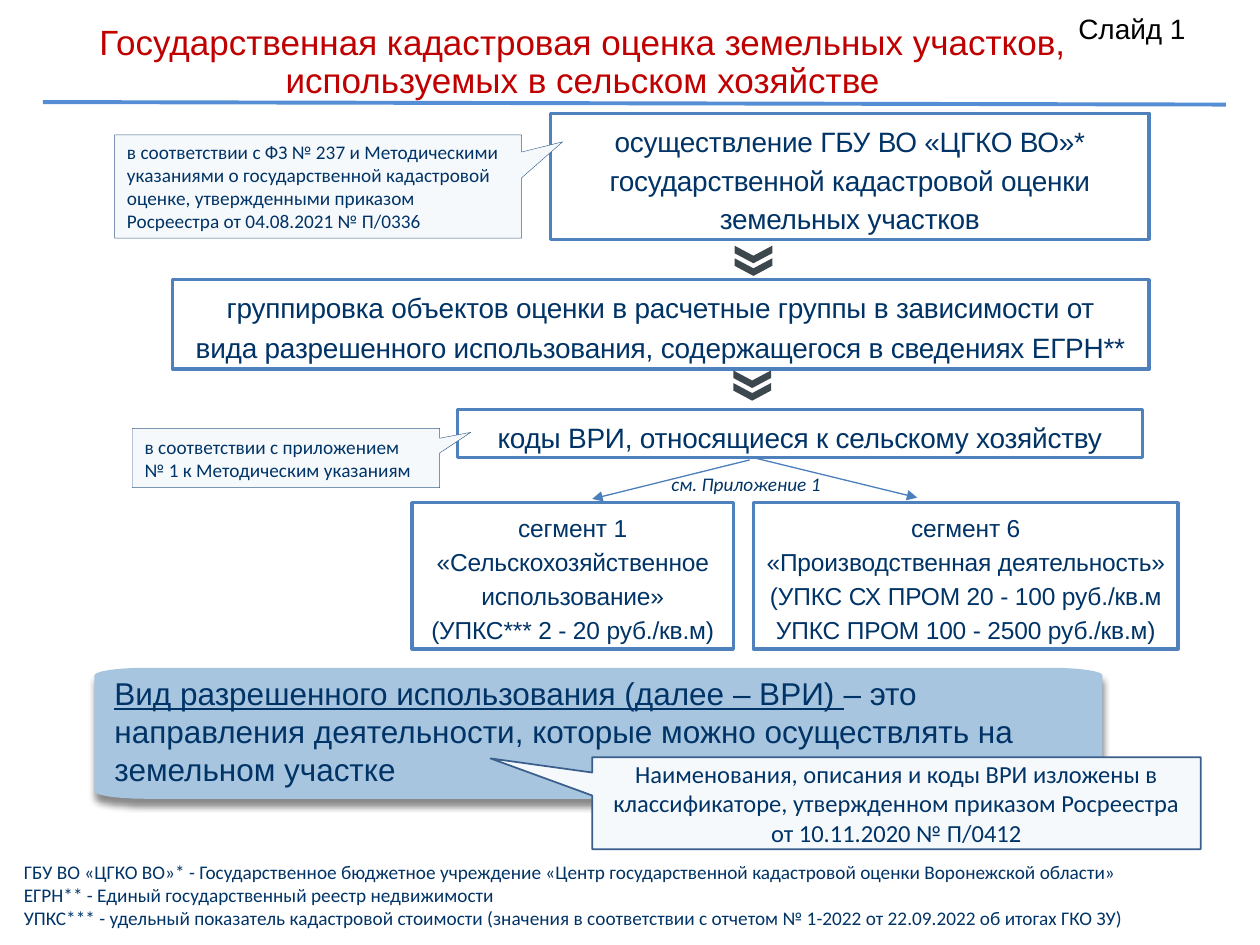
from math import cos, pi, sin

from lxml.etree import SubElement
from pptx import Presentation
from pptx.dml.color import RGBColor
from pptx.enum.shapes import MSO_CONNECTOR as Connector, MSO_SHAPE as Shape
from pptx.enum.text import MSO_ANCHOR as Anchor, MSO_AUTO_SIZE as AutoSize, PP_ALIGN as Align
from pptx.oxml.ns import qn
from pptx.util import Inches, Pt

NAVY = RGBColor(0x00, 0x33, 0x66)
RED = RGBColor(0xC0, 0x00, 0x00)
BLACK = RGBColor(0x00, 0x00, 0x00)
WHITE = RGBColor(0xFF, 0xFF, 0xFF)
RULE_BLUE = RGBColor(0x55, 0x8E, 0xD5)
FRAME_BLUE = RGBColor(0x4F, 0x81, 0xBD)
ARROW_BLUE = RGBColor(0x4B, 0x7E, 0xBC)
PALE = RGBColor(0xF6, 0xF9, 0xFC)
CALLOUT_EDGE = RGBColor(0x3A, 0x5F, 0x8C)
PANEL_BLUE = RGBColor(0xA8, 0xC5, 0xE0)
CHEVRON_GREY = RGBColor(0x3D, 0x48, 0x4E)

STEP_PARAGRAPH = {"alignment": Align.CENTER, "line_spacing": 1.15, "space_before": Pt(0.7)}
SEGMENT_PARAGRAPH = {"alignment": Align.CENTER, "line_spacing": 1.15}
LEFT = {"alignment": Align.LEFT}


def apply(target, formats):
    for name, value in formats.items():
        setattr(target, name, value)


def font_of(name, size, **extra):
    return {"name": name, "size": Pt(size), **extra}


def style_run(run, font, color=NAVY, spacing=None):
    apply(run.font, font)
    run.font.color.rgb = color
    if spacing is not None:
        run.font._element.set("spc", str(spacing))


def write(frame, lines, font, paragraph, anchor=Anchor.TOP, color=NAVY, spacing=None):
    apply(frame, {"word_wrap": True, "auto_size": AutoSize.NONE, "vertical_anchor": anchor})
    for index, line in enumerate(lines):
        para = frame.add_paragraph() if index else frame.paragraphs[0]
        apply(para, paragraph)
        run = para.add_run()
        run.text = line
        style_run(run, font, color, spacing)


def paint(shape, fill, edge=None, width=0):
    shape.shadow.inherit = False
    shape.fill.solid()
    shape.fill.fore_color.rgb = fill
    if edge is None:
        shape.line.fill.background()
    else:
        shape.line.color.rgb = edge
        shape.line.width = Pt(width)


def add_box(slide, box, kind=Shape.RECTANGLE):
    return slide.shapes.add_shape(kind, *map(Inches, box))


def add_step(slide, box, lines, size=16, paragraph=STEP_PARAGRAPH):
    step = add_box(slide, box)
    paint(step, WHITE, FRAME_BLUE, 2)
    write(step.text_frame, lines, font_of("Arial", size), paragraph, spacing=-10)


def add_callout(slide, box, pointer, lines, size=11, edge_width=0.25, align=Align.LEFT):
    callout = add_box(slide, box, Shape.RECTANGULAR_CALLOUT)
    callout.adjustments[0], callout.adjustments[1] = pointer
    paint(callout, PALE, CALLOUT_EDGE, edge_width)
    write(callout.text_frame, lines, font_of("Calibri", size), {"alignment": align}, Anchor.MIDDLE)


def add_note(slide, box, lines, **extra):
    note = add_box(slide, box)
    paint(note, WHITE)
    write(note.text_frame, lines, font_of("Calibri", 11, **extra), LEFT)


def add_line(slide, start, end, color, width, arrow=False):
    line = slide.shapes.add_connector(Connector.STRAIGHT, *map(Inches, (*start, *end)))
    line.line.color.rgb = color
    line.line.width = Pt(width)
    if arrow:
        SubElement(line.line._get_or_add_ln(), qn("a:tailEnd"), type="triangle")
    SubElement(line._element.spPr, qn("a:effectLst"))


def add_outline(slide, contours, fill):
    builder = None
    for contour in contours:
        first, *rest = [(Inches(x), Inches(y)) for x, y in contour]
        if builder is None:
            builder = slide.shapes.build_freeform(*first, scale=1.0)
        else:
            builder.move_to(*first)
        builder.add_line_segments(rest, close=True)
    outline = builder.convert_to_shape()
    paint(outline, fill)
    return outline


def add_chevrons(slide, box):
    left, top, width, height = box
    drop, thick = 0.08, 0.06
    gap = height - drop - thick
    middle, right = left + width / 2, left + width
    contours = [
        [(left, y), (middle, y + drop), (right, y), (right, y + thick),
         (middle, y + drop + thick), (left, y + thick)]
        for y in (top, top + gap)
    ]
    add_outline(slide, contours, CHEVRON_GREY)


def add_header(slide, box):
    title = slide.shapes.title
    apply(title, dict(zip(("left", "top", "width", "height"), map(Inches, box))))
    write(title.text_frame,
          ["Государственная кадастровая оценка земельных участков, используемых в сельском хозяйстве"],
          font_of("Arial", 20), {"alignment": Align.CENTER, "line_spacing": 0.9}, Anchor.MIDDLE, RED)
    number = slide.shapes.add_textbox(*map(Inches, (8.07, -0.02, 1.46, 0.49)))
    write(number.text_frame, ["Слайд 1"], font_of("Arial", 16), {"alignment": Align.JUSTIFY},
          Anchor.MIDDLE, BLACK)
    number.text_frame.paragraphs[0]._p.get_or_add_pPr().set("indent", str(Inches(0.39)))
    add_line(slide, (0.34, 0.81), (9.73, 0.83), RULE_BLUE, 2.25)


def add_definition(slide, box):
    left, top, width, height = box
    rx, ry, steps = 0.41, 0.06, 6
    corners = [(left + width - rx, top + height - ry), (left + rx, top + height - ry),
               (left + rx, top + ry), (left + width - rx, top + ry)]
    contour = [
        (x + rx * cos(angle), y + ry * sin(angle))
        for quarter, (x, y) in enumerate(corners)
        for angle in [(quarter + step / steps) * pi / 2 for step in range(steps + 1)]
    ]
    panel = add_outline(slide, [contour], PANEL_BLUE)
    effects = panel._element.spPr.find(qn("a:effectLst"))
    shadow = SubElement(effects, qn("a:outerShdw"), blurRad=str(Pt(4)), dist=str(Pt(4)),
                        dir="5400000", rotWithShape="0")
    shade = SubElement(shadow, qn("a:srgbClr"), val="000000")
    SubElement(shade, qn("a:alpha"), val="45000")

    definition = slide.shapes.add_textbox(*map(Inches, (left + 0.06, top, 7.95, 1.01)))
    write(definition.text_frame, ["Вид разрешенного использования (далее – ВРИ) "],
          font_of("Arial", 18, underline=True),
          {"space_before": Pt(6), "space_after": Pt(6)})
    meaning = definition.text_frame.paragraphs[0].add_run()
    meaning.text = "– это направления деятельности, которые можно осуществлять на земельном участке"
    style_run(meaning, font_of("Arial", 18, underline=False))
    add_callout(slide, (4.7, 6.01, 4.83, 0.73), (-0.667, -0.486),
                ["Наименования, описания и коды ВРИ изложены в классификаторе, "
                 "утвержденном приказом Росреестра от 10.11.2020 № П/0412"],
                14, 1, Align.CENTER)


def add_valuation_flow(slide):
    add_step(slide, (1.37, 2.22, 7.75, 0.71),
             ["группировка объектов оценки в расчетные группы в зависимости от",
              "вида разрешенного использования, содержащегося в сведениях ЕГРН**"])
    add_step(slide, (3.63, 3.25, 5.44, 0.38), ["коды ВРИ, относящиеся к сельскому хозяйству"])
    add_step(slide, (4.37, 0.9, 4.75, 1),
             ["осуществление ГБУ ВО «ЦГКО ВО»* государственной кадастровой оценки земельных участков"])
    for left, top in ((5.83, 1.95), (5.82, 2.94)):
        add_chevrons(slide, (left, top, 0.3, 0.24))
    pointer = (0.601, -0.432)
    add_callout(slide, (1.05, 3.4, 2.44, 0.47), pointer,
                ["в соответствии с приложением", "№ 1 к Методическим указаниям"])
    add_callout(slide, (0.91, 1.07, 3.23, 0.82), pointer,
                ["в соответствии с ФЗ № 237 и Методическими указаниями о государственной кадастровой "
                 "оценке, утвержденными приказом Росреестра от 04.08.2021 № П/0336"])


def add_segments(slide, top, height):
    for start, end in (((5.95, 3.65), (4.7, 3.96)), ((5.97, 3.63), (7.28, 3.95))):
        add_line(slide, start, end, ARROW_BLUE, 0.75, arrow=True)
    segments = [
        (3.27, 2.55, ["сегмент 1", "«Сельскохозяйственное использование»",
                      "(УПКС*** 2 - 20 руб./кв.м)"]),
        (5.98, 3.37, ["сегмент 6", "«Производственная деятельность»",
                      "(УПКС СХ ПРОМ 20 - 100 руб./кв.м", "УПКС ПРОМ 100 - 2500 руб./кв.м)"]),
    ]
    for left, width, lines in segments:
        add_step(slide, (left, top, width, height), lines, 14, SEGMENT_PARAGRAPH)


def main():
    deck = Presentation()
    deck.slide_width, deck.slide_height = Inches(10), Inches(7.5)
    slide = deck.slides.add_slide(deck.slide_layouts[5])
    add_header(slide, (0.2, 0.22, 8.85, 0.56))
    add_note(slide, (5.23, 3.7, 1.42, 0.29), ["см. Приложение 1"], italic=True)
    add_note(slide, (0.09, 6.78, 9.22, 0.66),
             ["ГБУ ВО «ЦГКО ВО»* - Государственное бюджетное учреждение "
              "«Центр государственной кадастровой оценки Воронежской области»",
              "ЕГРН** - Единый государственный реестр недвижимости",
              "УПКС*** - удельный показатель кадастровой стоимости "
              "(значения в соответствии с отчетом № 1-2022 от 22.09.2022 об итогах ГКО ЗУ)"])
    add_definition(slide, (0.75, 5.3, 8, 1.04))
    add_valuation_flow(slide)
    add_segments(slide, 3.99, 1.16)
    deck.save("out.pptx")


if __name__ == "__main__":
    main()
